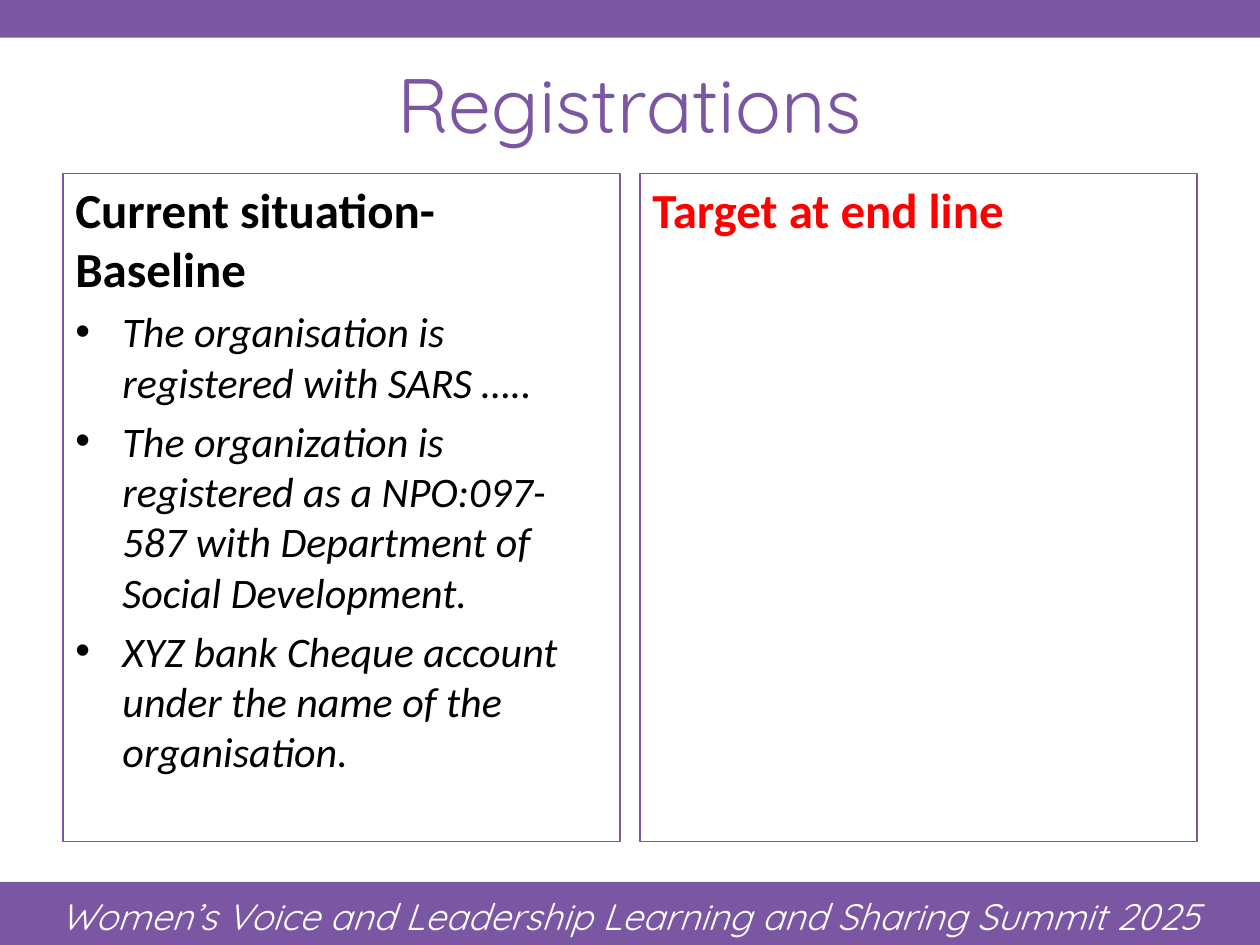
from lxml.etree import SubElement
from pptx import Presentation
from pptx.dml.color import RGBColor
from pptx.enum.shapes import MSO_SHAPE as Shape
from pptx.enum.text import MSO_ANCHOR as Anchor, PP_ALIGN as Align
from pptx.oxml.ns import qn
from pptx.util import Cm, Pt

WIDE, HIGH = 25.4, 19.05
PURPLE, WHITE, BLACK, RED = "7B56A3", "FFFFFF", "000000", "FF0000"
HEAD, BODY = "Quicksand", "Calibri"
INDENT = 0.95

FACTS = [
    "The organisation is registered with SARS …..",
    "The organization is registered as a NPO:097-587 with Department of Social Development.",
    "XYZ bank Cheque account under the name of the organisation.",
]


def color(code):
    return RGBColor.from_string(code)


def add_rect(slide, box, fill=None, line=None):
    rect = slide.shapes.add_shape(Shape.RECTANGLE, *map(Cm, box))
    rect.shadow.inherit = False
    if fill:
        rect.fill.solid()
        rect.fill.fore_color.rgb = color(fill)
    else:
        rect.fill.background()
    if line:
        rect.line.color.rgb = color(line)
        rect.line.width = Pt(0.75)
    else:
        rect.line.fill.background()
    return rect


def add_bullet(para):
    props = para._p.get_or_add_pPr()
    props.set("marL", str(Cm(INDENT)))
    props.set("indent", str(-Cm(INDENT)))
    SubElement(props, qn("a:buFont")).set("typeface", "Arial")
    SubElement(props, qn("a:buChar")).set("char", "•")


def write(frame, text, size, font=BODY, ink=BLACK, bold=False, italic=False,
          align=Align.LEFT, before=0, spacing=None, bullet=False):
    """Fill the empty first paragraph, or add a new one."""
    first = frame.paragraphs[0]
    para = frame.add_paragraph() if first.runs else first
    para.alignment = align
    para.space_before = Pt(before)
    if spacing:
        para.line_spacing = spacing
    if bullet:
        add_bullet(para)
    run = para.add_run()
    run.text = text
    run.font.name = font
    run.font.size = Pt(size)
    run.font.bold = bold
    run.font.italic = italic
    run.font.color.rgb = color(ink)


def add_label(slide, box, anchor, text, size, **style):
    frame = slide.shapes.add_textbox(*map(Cm, box)).text_frame
    frame.word_wrap = True
    frame.vertical_anchor = anchor
    write(frame, text, size, font=HEAD, align=Align.CENTER, **style)


def add_footer(slide, box):
    left, top, width, height = box
    add_rect(slide, box, fill=PURPLE)
    add_label(slide, (left + 0.43, top + 0.05, width - 0.86, height - 0.05),
              Anchor.TOP, "Women’s Voice and Leadership Learning and Sharing Summit 2025",
              21, ink=WHITE, italic=True, spacing=1.07)


def add_panel(slide, box, title, ink, items=()):
    frame = add_rect(slide, box, line=PURPLE).text_frame
    frame.word_wrap = True
    frame.vertical_anchor = Anchor.TOP
    write(frame, title, 28, ink=ink, bold=True, before=5.6)
    for item in items:
        write(frame, item, 24, italic=True, before=4.8, bullet=True)


def main():
    deck = Presentation()
    deck.slide_width, deck.slide_height = Cm(WIDE), Cm(HIGH)
    slide = deck.slides.add_slide(deck.slide_layouts[6])

    # Bands at the top and bottom edges
    add_rect(slide, (0, 0, WIDE, 0.76), fill=PURPLE)
    add_footer(slide, (0, HIGH - 1.27, WIDE, 1.27))

    # Title
    add_label(slide, (0, 0.91, WIDE, 2.34), Anchor.MIDDLE, "Registrations", 44, ink=PURPLE)

    # Two equal panels between the side margins
    side, gap = 1.27, 0.4
    width = (WIDE - 2 * side - gap) / 2
    panels = [("Current situation- Baseline", BLACK, FACTS), ("Target at end line", RED, ())]
    for col, panel in enumerate(panels):
        add_panel(slide, (side + col * (width + gap), 3.5, width, 13.46), *panel)

    deck.save("out.pptx")


if __name__ == "__main__":
    main()
